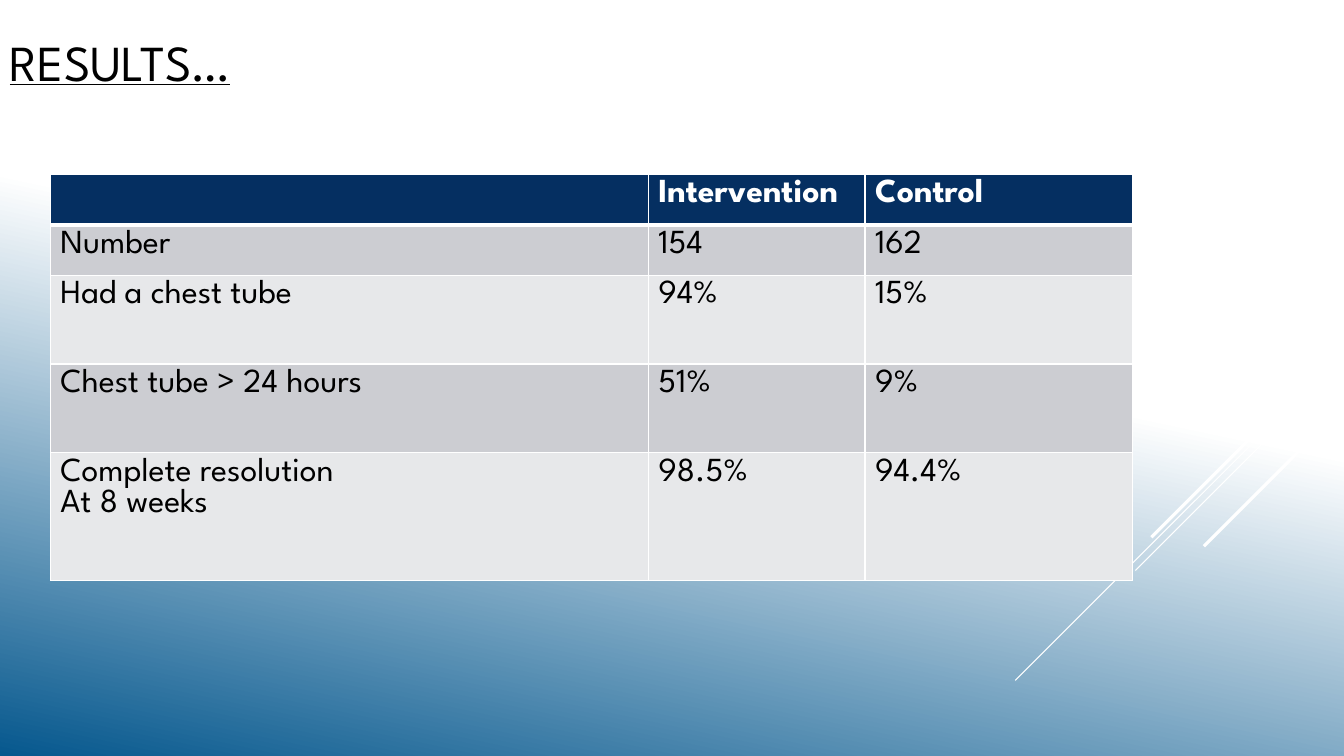
from dataclasses import dataclass

from lxml import etree
from pptx import Presentation
from pptx.dml.color import RGBColor
from pptx.enum.shapes import MSO_CONNECTOR
from pptx.enum.text import MSO_ANCHOR
from pptx.oxml.ns import qn
from pptx.util import Inches, Pt

STRAIGHT = MSO_CONNECTOR.STRAIGHT
MIDDLE = MSO_ANCHOR.MIDDLE


@dataclass(frozen=True)
class Theme:
    font: str = "League Spartan"
    title_size: int = 36
    table_size: int = 24
    white: str = "FFFFFF"
    black: str = "000000"
    sky: str = "06588E"
    header: str = "052F61"
    bands: tuple = ("CCCDD2", "E7E8EA")
    thin: float = 0.75
    thick: float = 2.25
    grid: float = 1
    header_rule: float = 3


THEME = Theme()

RESULTS = [
    ("", "Intervention", "Control"),
    ("Number", "154", "162"),
    ("Had a chest tube", "94%", "15%"),
    ("Chest tube > 24 hours", "51%", "9%"),
    ("Complete resolution\nAt 8 weeks", "98.5%", "94.4%"),
]
COLUMN_WIDTHS = (5.93, 2.15, 2.65)
ROW_HEIGHTS = (0.49, 0.49, 0.88, 0.88, 1.27)

# Each ray falls at 45 degrees from the right edge: start height, drop, weight
RAYS = [
    (3.24, 1.0, THEME.thin),
    (3.49, 3.26, THEME.thin),
    (3.59, 2.07, THEME.thin),
    (3.42, 1.91, THEME.thick),
    (4.03, 1.39, THEME.thick),
]
RIGHT_EDGE = 13.33


def rgb(value):
    return RGBColor.from_string(value)


def add_run(paragraph, text, size, color, bold=False, underline=False):
    run = paragraph.add_run()
    run.text = text
    font = run.font
    font.name, font.size = THEME.font, Pt(size)
    font.bold, font.underline = bold, underline
    font.color.rgb = rgb(color)


def paint_background(slide):
    fill = slide.background.fill
    fill.gradient()
    fill.gradient_angle = 258  # counter-clockwise
    stops = ((0.44, THEME.white), (1.0, THEME.sky))
    for stop, (position, color) in zip(fill.gradient_stops, stops):
        stop.position = position
        stop.color.rgb = rgb(color)


def add_ray(slide, top, drop, weight):
    ray = slide.shapes.add_connector(
        STRAIGHT, Inches(RIGHT_EDGE), Inches(top),
        Inches(RIGHT_EDGE - drop), Inches(top + drop))
    ray.line.color.rgb = rgb(THEME.white)
    ray.line.width = Pt(weight)
    etree.SubElement(ray._element.spPr, qn("a:effectLst"))


def add_title(slide, text):
    title = slide.shapes.add_textbox(0, 0, Inches(10.73), Inches(1.21))
    frame = title.text_frame
    frame.word_wrap = True
    frame.vertical_anchor = MIDDLE
    add_run(frame.paragraphs[0], text, THEME.title_size, THEME.black, underline=True)


def add_borders(cell, top, bottom):
    properties = cell._tc.get_or_add_tcPr()
    weights = {"L": THEME.grid, "R": THEME.grid, "T": top, "B": bottom}
    for side, weight in weights.items():
        border = etree.SubElement(properties, qn(f"a:ln{side}"), w=str(Pt(weight)))
        solid = etree.SubElement(border, qn("a:solidFill"))
        etree.SubElement(solid, qn("a:srgbClr"), val=THEME.white)


def fill_cell(cell, text, row):
    is_header = row == 0
    add_borders(cell,
                top=THEME.header_rule if row == 1 else THEME.grid,
                bottom=THEME.header_rule if is_header else THEME.grid)
    cell.fill.solid()
    band = THEME.bands[(row - 1) % 2]
    cell.fill.fore_color.rgb = rgb(THEME.header if is_header else band)
    if not text:
        return
    frame = cell.text_frame
    for index, line in enumerate(text.split("\n")):
        paragraph = frame.add_paragraph() if index else frame.paragraphs[0]
        add_run(paragraph, line, THEME.table_size,
                THEME.white if is_header else THEME.black, bold=is_header)


def add_results_table(slide):
    table = slide.shapes.add_table(
        len(RESULTS), len(COLUMN_WIDTHS), Inches(0.5), Inches(1.73),
        Inches(sum(COLUMN_WIDTHS)), Inches(sum(ROW_HEIGHTS))).table
    for column, width in zip(table.columns, COLUMN_WIDTHS):
        column.width = Inches(width)
    for row, height in zip(table.rows, ROW_HEIGHTS):
        row.height = Inches(height)
    for row, values in enumerate(RESULTS):
        for column, text in enumerate(values):
            fill_cell(table.cell(row, column), text, row)


def main():
    deck = Presentation()
    deck.slide_width, deck.slide_height = Inches(RIGHT_EDGE), Inches(7.5)
    slide = deck.slides.add_slide(deck.slide_layouts[6])

    # Backdrop
    paint_background(slide)
    for ray in RAYS:
        add_ray(slide, *ray)

    # Content
    add_title(slide, "RESULTS…")
    add_results_table(slide)

    deck.save("out.pptx")


if __name__ == "__main__":
    main()
